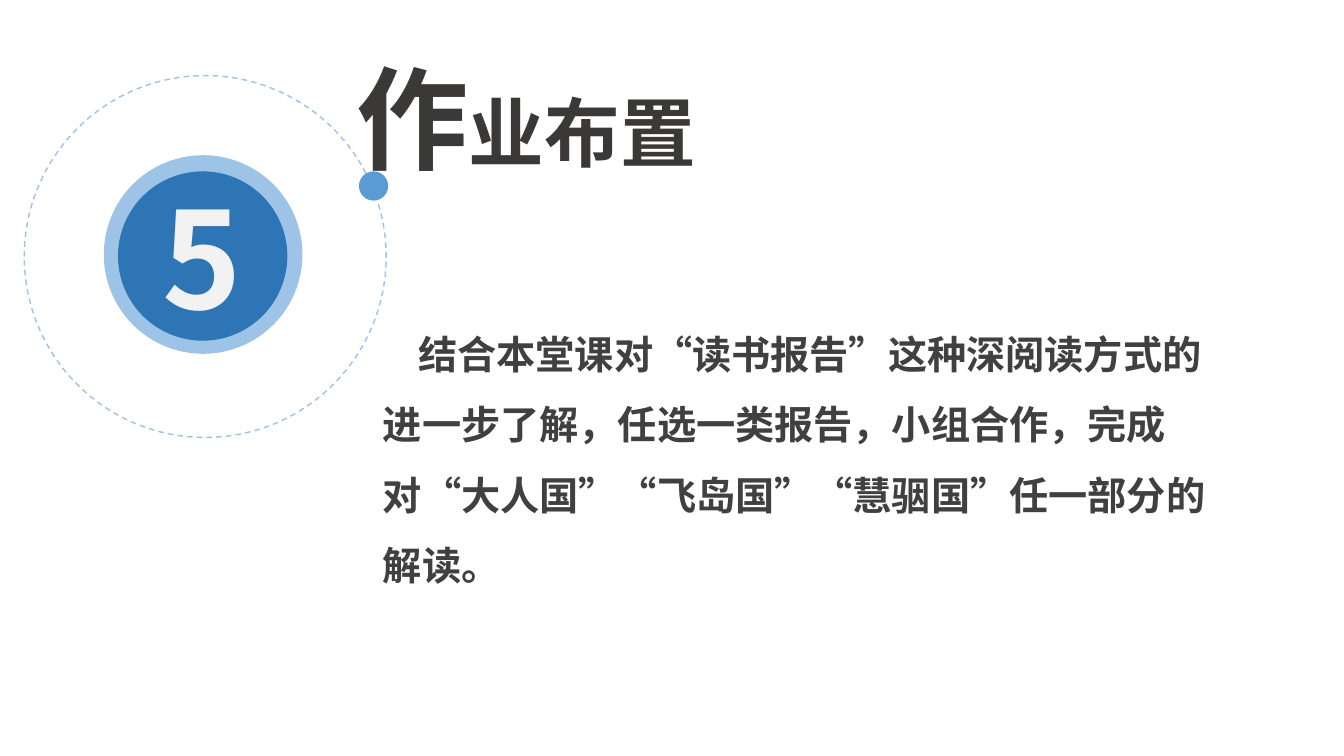
from dataclasses import dataclass

from lxml import etree
from pptx import Presentation
from pptx.dml.color import RGBColor
from pptx.enum.dml import MSO_LINE
from pptx.enum.lang import MSO_LANGUAGE_ID
from pptx.enum.shapes import MSO_SHAPE
from pptx.enum.text import MSO_ANCHOR, MSO_AUTO_SIZE, PP_ALIGN
from pptx.oxml.ns import qn
from pptx.util import Inches, Pt

OVAL = MSO_SHAPE.OVAL
DASH = MSO_LINE.DASH
MIDDLE = MSO_ANCHOR.MIDDLE
CENTER = PP_ALIGN.CENTER
FIT_SHAPE = MSO_AUTO_SIZE.SHAPE_TO_FIT_TEXT
CHINESE = MSO_LANGUAGE_ID.SIMPLIFIED_CHINESE


@dataclass(frozen=True)
class Theme:
    font: str = "Noto Sans CJK SC"
    pale_blue: str = "9DC3E6"
    blue: str = "5B9BD5"
    deep_blue: str = "2E75B6"
    number: str = "F2F2F2"
    title: str = "3B3838"
    body: str = "404040"
    number_size: int = 96
    initial_size: int = 80
    title_size: int = 54
    body_size: int = 28


THEME = Theme()


def style_run(r, size, color):
    r.font.size = Pt(size)
    r.font.bold = True
    r.font.name = THEME.font
    r.font.language_id = CHINESE
    r.font.color.rgb = RGBColor.from_string(color)
    ea = etree.Element(qn("a:ea"), typeface=THEME.font)
    r.font._element.find(qn("a:latin")).addnext(ea)


def set_insets(tf, left):
    tf.margin_left = Inches(left)
    tf.margin_top = tf.margin_right = tf.margin_bottom = 0


def add_circle(shapes, left, top, diameter, fill=None, line=None):
    sp = shapes.add_shape(OVAL, Inches(left), Inches(top),
                          Inches(diameter), Inches(diameter))
    sp.shadow.inherit = False
    if fill:
        sp.fill.solid()
        sp.fill.fore_color.rgb = RGBColor.from_string(fill)
    else:
        sp.fill.background()
    if line:
        sp.line.color.rgb = RGBColor.from_string(line)
        sp.line.width = Pt(1)
        sp.line.dash_style = DASH
    else:
        sp.line.fill.background()
    return sp


def add_number_badge(s, left, top, diameter, number):
    """Numbered disc inside a dashed orbit; the box bounds the orbit."""
    shapes = s.shapes.add_group_shape().shapes
    add_circle(shapes, left + 0.79, top + 0.79, 1.97, fill=THEME.pale_blue)
    add_circle(shapes, left, top, diameter, line=THEME.pale_blue)
    add_circle(shapes, left + 3.32, top + 0.95, 0.29, fill=THEME.blue)
    disc = add_circle(shapes, left + 0.93, top + 0.95, 1.68, fill=THEME.deep_blue)
    tf = disc.text_frame
    set_insets(tf, 0)
    tf.vertical_anchor = MIDDLE
    p = tf.paragraphs[0]
    p.text = number
    p.alignment = CENTER
    style_run(p.runs[0], THEME.number_size, THEME.number)


def add_text_box(s, left, top, width, height):
    sp = s.shapes.add_textbox(Inches(left), Inches(top),
                              Inches(width), Inches(height))
    sp.text_frame.word_wrap = True
    return sp.text_frame


def add_title(s, left, top, width, height, text):
    """Title whose first character is enlarged."""
    tf = add_text_box(s, left, top, width, height)
    set_insets(tf, 0.29)
    p = tf.paragraphs[0]
    p.line_spacing = 0.7
    for part, size in ((text[0], THEME.initial_size), (text[1:], THEME.title_size)):
        r = p.add_run()
        r.text = part
        style_run(r, size, THEME.title)


def add_body(s, left, top, width, height, text):
    tf = add_text_box(s, left, top, width, height)
    tf.auto_size = FIT_SHAPE
    p = tf.paragraphs[0]
    p.text = text
    p.line_spacing = 1.5
    pPr = p._p.get_or_add_pPr()
    pPr.set("marL", "0")
    pPr.set("indent", str(Inches(0.35)))
    style_run(p.runs[0], THEME.body_size, THEME.body)


def main():
    prs = Presentation()
    prs.slide_width, prs.slide_height = Inches(13.33), Inches(7.5)
    s = prs.slides.add_slide(prs.slide_layouts[6])
    add_number_badge(s, 0.24, 0.75, 3.59, "5")
    add_title(s, 3.25, 0.86, 4.64, 2.09, "作业布置")
    add_body(s, 3.7, 2.99, 8.68, 2.9,
             "结合本堂课对“读书报告”这种深阅读方式的进一步了解，任选一类报告，"
             "小组合作，完成对“大人国”“飞岛国”“慧骃国”任一部分的解读。")
    prs.save("out.pptx")


if __name__ == "__main__":
    main()
